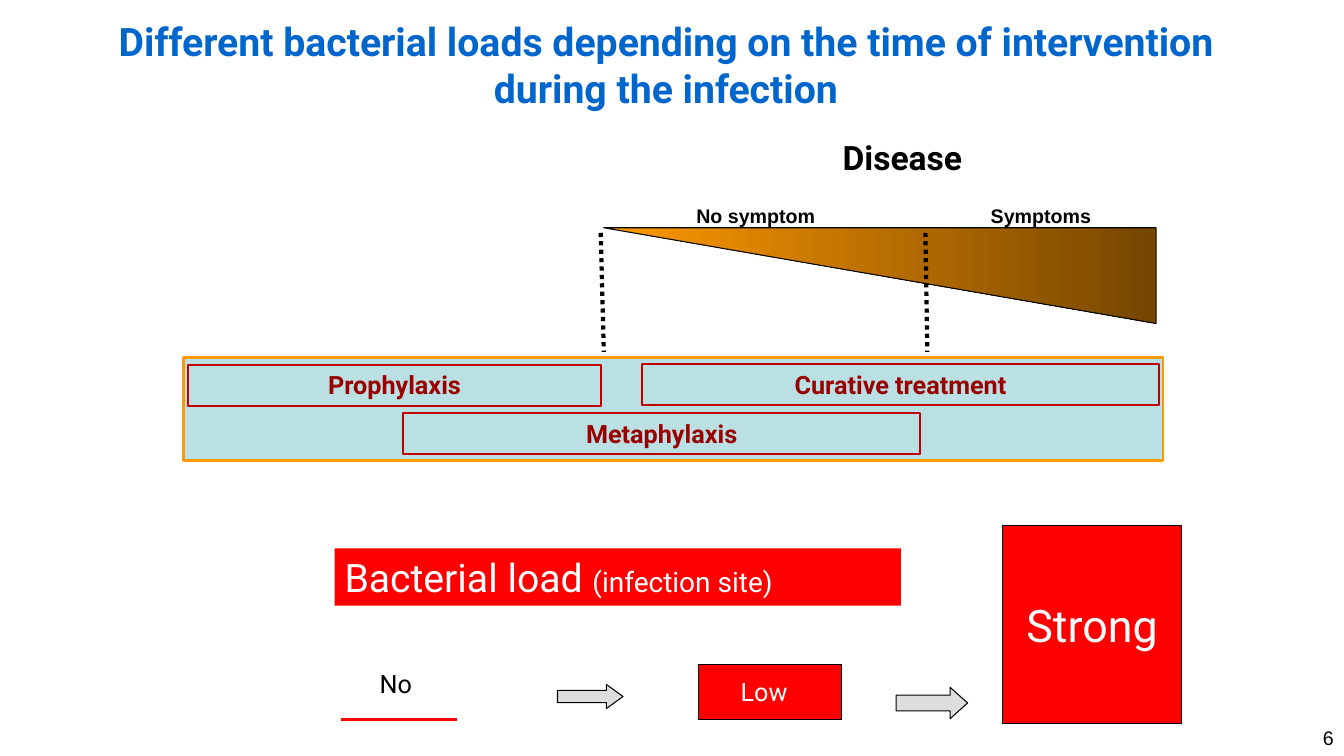
from dataclasses import dataclass

from lxml.etree import SubElement
from pptx import Presentation
from pptx.dml.color import RGBColor
from pptx.enum.dml import MSO_LINE
from pptx.enum.shapes import MSO_CONNECTOR, MSO_SHAPE
from pptx.enum.text import MSO_ANCHOR, PP_ALIGN
from pptx.oxml.ns import qn
from pptx.util import Pt


@dataclass(frozen=True)
class Theme:
    head: str = "0066CC"
    black: str = "000000"
    white: str = "FFFFFF"
    load: str = "FF0000"
    arrow: str = "DDDDDD"
    band: str = "BBE0E3"
    frame: str = "FE9B03"
    edge: str = "C00000"
    phase: str = "990000"
    early: str = "FF9900"
    late: str = "754600"
    font: str = "Roboto"
    plain: str = "Arial"
    huge: int = 32
    title: int = 28
    large: int = 24
    mid: int = 20
    body: int = 18
    small: int = 14


THEME = Theme()


def rgb(code):
    return RGBColor.from_string(code)


def write(shape, text, size, color, bold=False, font=THEME.font,
          align=PP_ALIGN.LEFT, anchor=MSO_ANCHOR.TOP, wrap=True):
    frame = shape.text_frame
    frame.text = text
    frame.word_wrap = wrap
    frame.vertical_anchor = anchor
    line = frame.paragraphs[0]
    line.alignment = align
    style(line.runs[0], size, color, bold, font)


def style(run, size, color, bold=False, font=THEME.font):
    run.font.size = Pt(size)
    run.font.bold = bold
    run.font.name = font
    run.font.color.rgb = rgb(color)


def label(slide, box, text, size, color=THEME.black, **look):
    area = slide.shapes.add_textbox(*map(Pt, box))
    write(area, text, size, color, **look)


def block(slide, box, fill=None, edge=THEME.black, width=0.75,
          kind=MSO_SHAPE.RECTANGLE):
    shape = slide.shapes.add_shape(kind, *map(Pt, box))
    shape.shadow.inherit = False
    if fill:
        shape.fill.solid()
        shape.fill.fore_color.rgb = rgb(fill)
    else:
        shape.fill.background()
    if edge:
        shape.line.color.rgb = rgb(edge)
        shape.line.width = Pt(width)
    else:
        shape.line.fill.background()
    return shape


def wedge(slide, box):
    """Add a triangle that grows and darkens from left to right."""
    shape = block(slide, box, kind=MSO_SHAPE.RIGHT_TRIANGLE)
    frame = shape.element.spPr.find(qn("a:xfrm"))
    frame.set("flipH", "1")
    frame.set("flipV", "1")
    shape.fill.gradient()
    shape.fill.gradient_angle = 180
    for stop, code in zip(shape.fill.gradient_stops, (THEME.early, THEME.late)):
        stop.color.rgb = rgb(code)
    for stop, place in zip(shape.fill.gradient_stops, (0, 1)):
        stop.position = place


def arrow(slide, box, head):
    shape = block(slide, box, THEME.arrow, kind=MSO_SHAPE.RIGHT_ARROW)
    shape.adjustments[1] = head


def rule(slide, ends, color, width, dash=None):
    line = slide.shapes.add_connector(MSO_CONNECTOR.STRAIGHT, *map(Pt, ends))
    line.line.color.rgb = rgb(color)
    line.line.width = Pt(width)
    if dash:
        line.line.dash_style = dash
    SubElement(line.element.spPr, qn("a:effectLst"))


def phase(slide, left, top, width, text):
    shape = block(slide, (left, top, width, 29.3), edge=THEME.edge, width=1.5)
    write(shape, text, THEME.body, THEME.phase, bold=True,
          align=PP_ALIGN.CENTER)


def disease(slide):
    wedge(slide, (431.3, 162.7, 394.6, 68.4))
    label(slide, (594.7, 94.3, 109.4, 36.7), "Disease", THEME.large,
          bold=True, wrap=False)
    for left, width, text in ((490.3, 100, "No symptom"),
                              (700.6, 93.6, "Symptoms")):
        label(slide, (left, 141.8, width, 24.2), text, THEME.small,
              bold=True, font=THEME.plain, wrap=False)


def phases(slide):
    block(slide, (131, 255.6, 699.8, 73.4), THEME.band, THEME.frame, 2)
    phase(slide, 458.6, 260, 369.4, "Curative treatment")
    phase(slide, 134.6, 260.6, 294.5, "Prophylaxis")
    phase(slide, 288, 295.2, 369.4, "Metaphylaxis")
    for start, end in ((429.1, 431.3), (661, 662.4)):
        rule(slide, (start, 166.3, end, 251.3), THEME.black, 3,
             MSO_LINE.ROUND_DOT)


def loads(slide):
    bar = block(slide, (239, 391.7, 404.6, 41), THEME.load, None)
    write(bar, "Bacterial load ", THEME.title, THEME.white)
    site = bar.text_frame.paragraphs[0].add_run()
    site.text = "(infection site)"
    style(site, THEME.mid, THEME.white)

    label(slide, (264.2, 473.8, 46.1, 29.5), "No", THEME.body, wrap=False)
    rule(slide, (243.4, 514.1, 326.2, 514.1), THEME.load, 2.25)
    arrow(slide, (398.2, 488.9, 46.8, 17.3), 0.69)
    block(slide, (499, 474.5, 102.2, 39.6), THEME.load)
    label(slide, (522, 479.5, 60.5, 29.5), "Low", THEME.body, THEME.white,
          wrap=False)
    arrow(slide, (640.1, 491, 51.1, 22.3), 0.56)
    strong = block(slide, (716.4, 375.1, 127.4, 141.8), THEME.load)
    write(strong, "Strong", THEME.huge, THEME.white, wrap=False,
          align=PP_ALIGN.CENTER, anchor=MSO_ANCHOR.MIDDLE)


def main():
    deck = Presentation()
    deck.slide_width, deck.slide_height = Pt(960), Pt(540)
    slide = deck.slides.add_slide(deck.slide_layouts[6])
    label(slide, (74.2, 15.1, 802.8, 61.9),
          "Different bacterial loads depending on the time of intervention "
          "during the infection", THEME.title, THEME.head, bold=True,
          align=PP_ALIGN.CENTER, anchor=MSO_ANCHOR.MIDDLE)
    disease(slide)
    phases(slide)
    loads(slide)
    label(slide, (712.1, 514.8, 247.7, 25.2), "6", THEME.small,
          font=THEME.plain, align=PP_ALIGN.RIGHT)
    deck.save("out.pptx")


if __name__ == "__main__":
    main()
